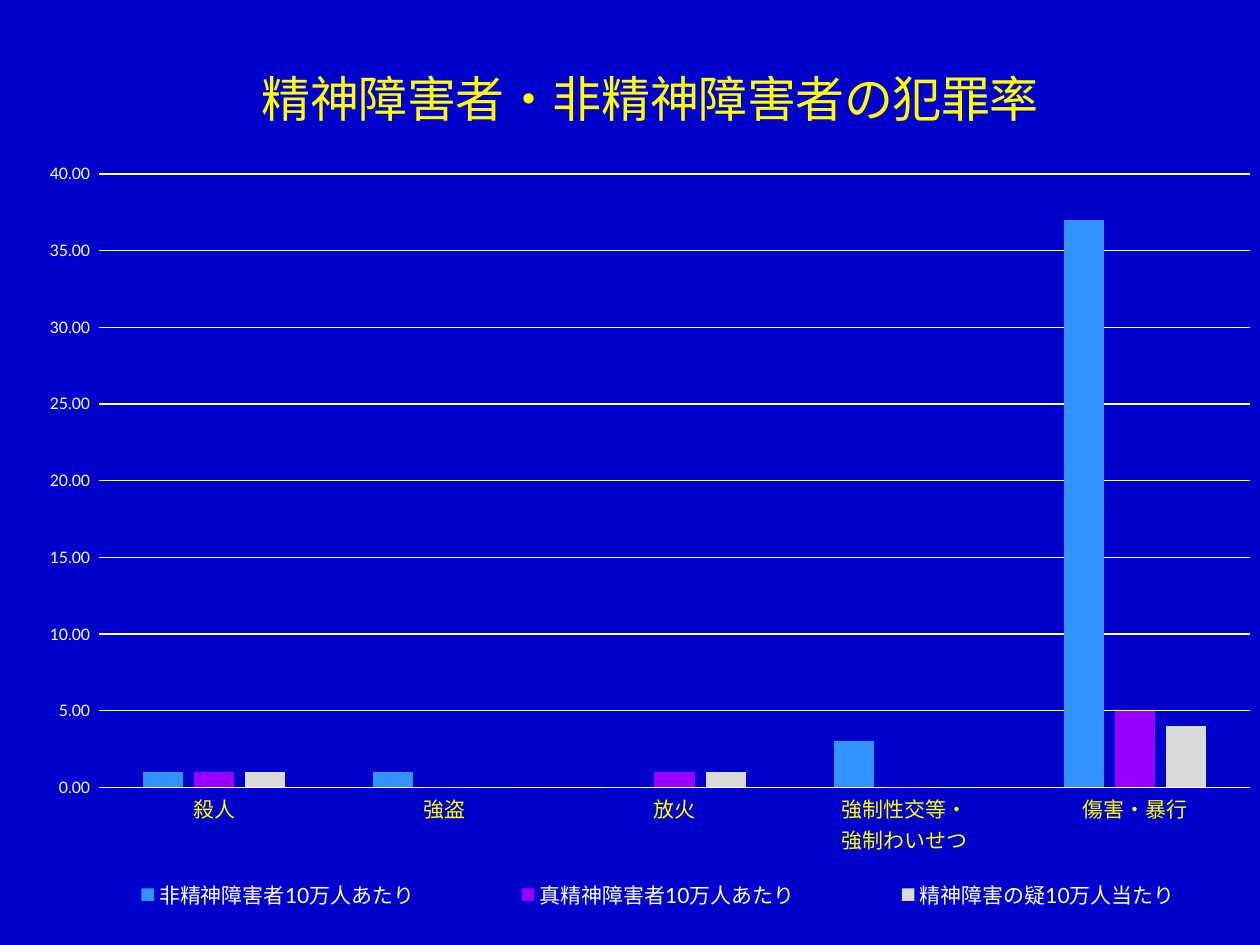
from dataclasses import dataclass

from lxml.etree import SubElement
from pptx import Presentation
from pptx.chart.data import CategoryChartData
from pptx.dml.color import RGBColor
from pptx.enum.chart import XL_CHART_TYPE, XL_LEGEND_POSITION, XL_TICK_MARK
from pptx.oxml import parse_xml
from pptx.oxml.ns import nsdecls, qn
from pptx.util import Pt

COLORS = {
    "background": "0000CC",
    "heading": "FFFF00",
    "text": "FFFFFF",
    "blue": "3193FF",
    "purple": "9900FF",
    "grey": "DADADA",
}
FONT = "Lato"
NUMBER_FORMAT = r"#,##0.00_);\(#,##0.00\)"
CATEGORIES = ["殺人", "強盗", "放火", "強制性交等・\n強制わいせつ", "傷害・暴行"]
CHART_WIDTH, CHART_HEIGHT = Pt(714.24), Pt(516.24)


@dataclass
class Series:
    name: str
    values: tuple[int, ...]
    color: str


SERIES = [
    Series("非精神障害者10万人あたり", (1, 1, 0, 3, 37), "blue"),
    Series("真精神障害者10万人あたり", (1, 0, 1, 0, 5), "purple"),
    Series("精神障害の疑10万人当たり", (1, 0, 1, 0, 4), "grey"),
]


def rgb(name: str) -> RGBColor:
    return RGBColor.from_string(COLORS[name])


def style_font(font, size: float, color: str) -> None:
    font.name = FONT
    font.size = Pt(size)
    font.bold = False
    font.color.rgb = rgb(color)


def style_line(line) -> None:
    line.color.rgb = rgb("text")
    line.width = Pt(0.75)


def place(element, index: int, inner: bool = False, **lengths: int) -> None:
    old = element.find(qn("c:layout"))
    if old is not None:
        element.remove(old)
    layout = parse_xml(f"<c:layout {nsdecls('c')}><c:manualLayout/></c:layout>")
    settings = {"layoutTarget": "inner"} if inner else {}
    settings |= {"xMode": "edge", "yMode": "edge"}
    for tag, length in lengths.items():
        settings[tag] = length / (CHART_WIDTH if tag in "xw" else CHART_HEIGHT)
    for tag, value in settings.items():
        SubElement(layout[0], qn(f"c:{tag}")).set("val", str(value))
    element.insert(index, layout)


def add_rate_chart(s) -> None:
    data = CategoryChartData(number_format=NUMBER_FORMAT)
    data.categories = CATEGORIES
    for item in SERIES:
        data.add_series(item.name, item.values)
    chart = s.shapes.add_chart(
        XL_CHART_TYPE.COLUMN_CLUSTERED, Pt(14.4), Pt(12.24), CHART_WIDTH, CHART_HEIGHT, data
    ).chart
    style_font(chart.font, 10, "text")

    title = chart.chart_title
    p = title.text_frame.paragraphs[0]
    p.text = "精神障害者・非精神障害者の犯罪率"
    style_font(p.font, 28, "heading")
    place(title._element, 1, x=Pt(130), y=Pt(14))

    plot = chart.plots[0]
    plot.gap_width = 219
    plot.overlap = -27
    plot.vary_by_categories = False
    for series, item in zip(plot.series, SERIES):
        series.format.fill.solid()
        series.format.fill.fore_color.rgb = rgb(item.color)
    place(chart._chartSpace.chart.plotArea, 0, inner=True,
          x=Pt(42.2), y=Pt(87.2), w=Pt(657.8), h=Pt(350.6))

    for axis, size, color in (
        (chart.category_axis, 12, "heading"),
        (chart.value_axis, 9, "text"),
    ):
        axis.major_tick_mark = axis.minor_tick_mark = XL_TICK_MARK.NONE
        style_font(axis.tick_labels.font, size, color)
    style_line(chart.category_axis.format.line)
    axis = chart.value_axis
    axis.minimum_scale, axis.maximum_scale, axis.major_unit = 0, 40, 5
    axis.format.line.fill.background()
    axis.tick_labels.number_format = NUMBER_FORMAT
    axis.tick_labels.number_format_is_linked = False
    style_line(axis.major_gridlines.format.line)

    chart.has_legend = True
    legend = chart.legend
    legend.position = XL_LEGEND_POSITION.BOTTOM
    legend.include_in_layout = False
    style_font(legend.font, 12, "text")
    place(legend._element, 1, x=Pt(9.2), y=Pt(483.5), w=Pt(705), h=Pt(31))


def main() -> None:
    prs = Presentation()
    prs.slide_width, prs.slide_height = Pt(720), Pt(540)
    s = prs.slides.add_slide(prs.slide_layouts[6])
    s.background.fill.solid()
    s.background.fill.fore_color.rgb = rgb("background")
    add_rate_chart(s)
    prs.save("out.pptx")


if __name__ == "__main__":
    main()
